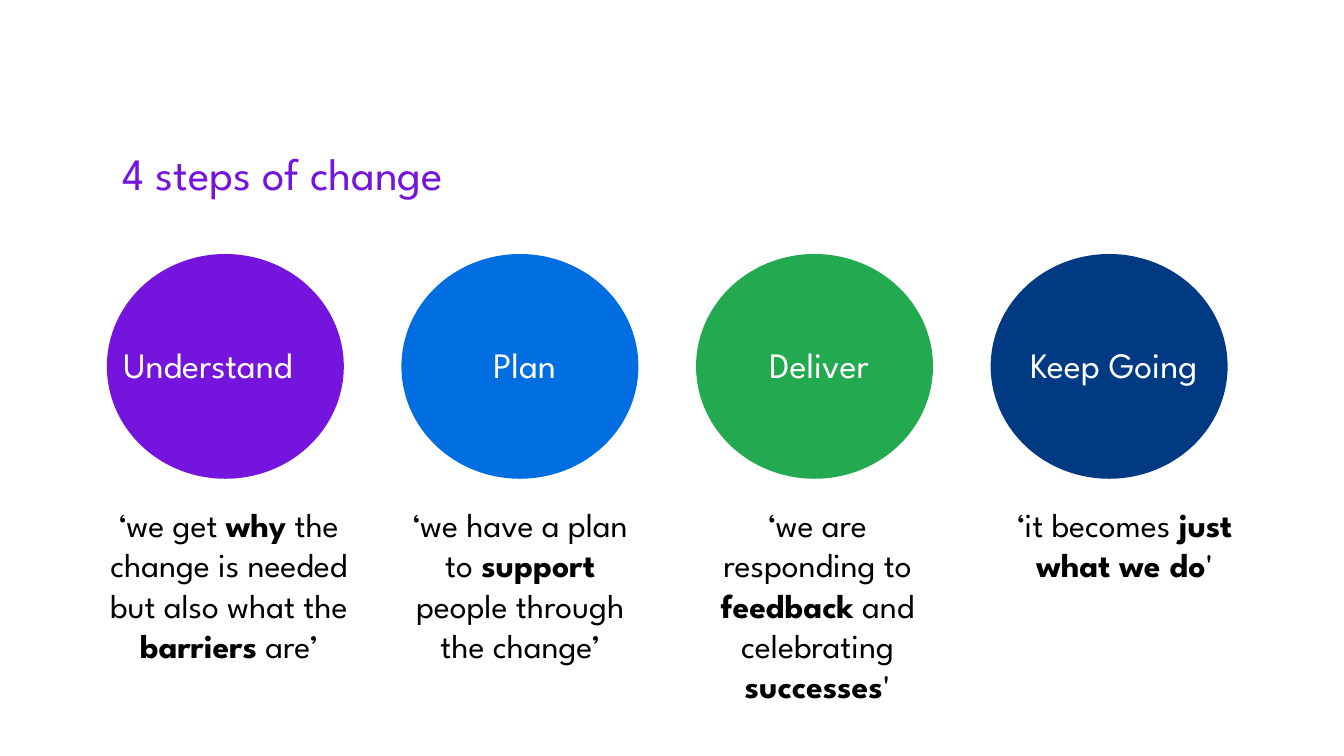
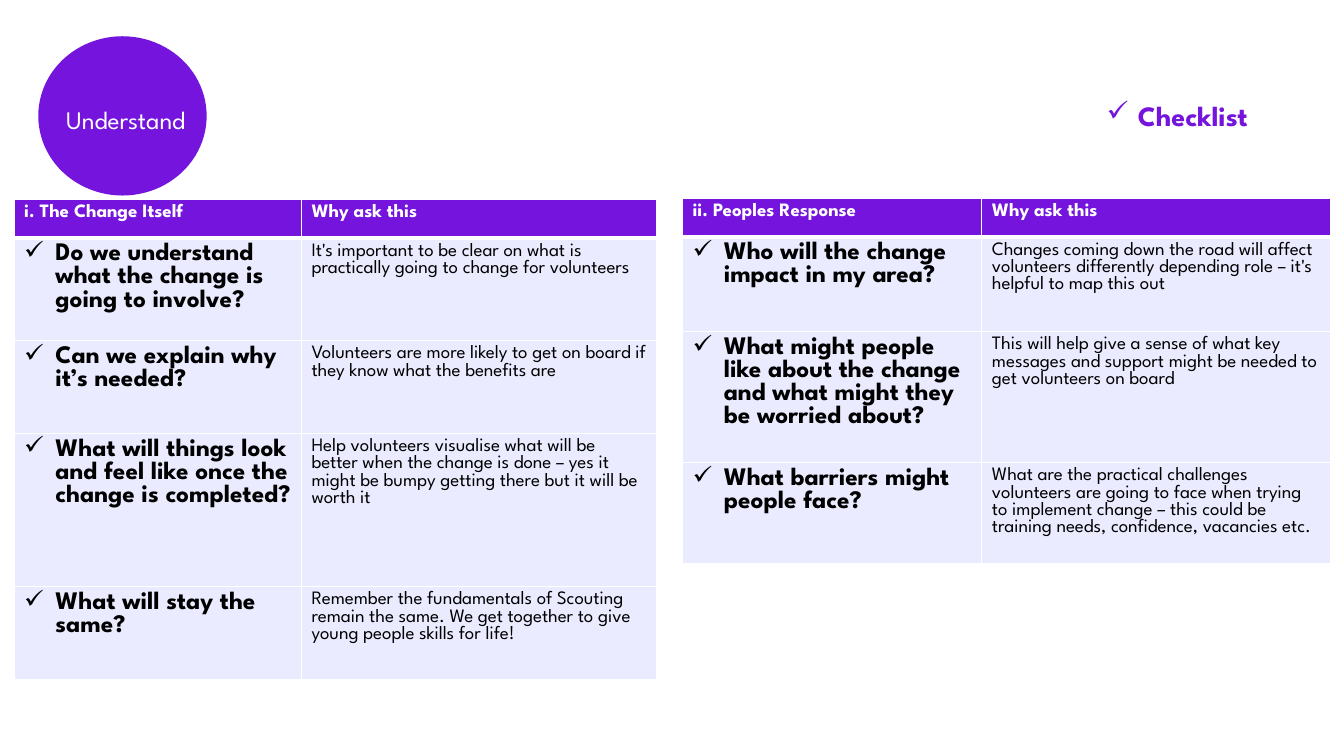
import dataclasses

import lxml.etree
import pptx
import pptx.dml.color
import pptx.enum.shapes
import pptx.enum.text
import pptx.oxml.ns
import pptx.util

COLORS = {
    "purple": "7414DC",
    "blue": "006EE0",
    "green": "23A950",
    "navy": "003A82",
    "lavender": "EBEBFF",
    "white": "FFFFFF",
    "black": "000000",
}
FONT = "League Spartan"
SLIDE_WIDTH = pptx.util.Inches(13.33)
SLIDE_HEIGHT = pptx.util.Inches(7.5)
COLUMN = SLIDE_WIDTH / 100
ROW = SLIDE_HEIGHT / 100
BULLET_INDENT = pptx.util.Inches(0.31)
ALIGN = pptx.enum.text.PP_ALIGN

STEP_PITCH = 21.92
STEPS = [
    ("Understand", "purple", ALIGN.LEFT, -0.9,
     ["‘we get ", "why", " the change is needed but also what the ", "barriers", " are’"]),
    ("Plan", "blue", ALIGN.CENTER, -1.14,
     ["‘we have a plan to ", "support", " people through the change’"]),
    ("Deliver", "green", ALIGN.CENTER, -0.94,
     ["‘we are responding to ", "feedback", " and celebrating ", "successes", "'"]),
    ("Keep Going", "navy", ALIGN.CENTER, 0,
     ["‘it becomes ", "just what we do", "'"]),
]

CHANGE_QUESTIONS = [
    ("i. The Change Itself", "Why ask this"),
    ("Do we understand what the change is going to involve?",
     "It's important to be clear on what is practically going to change for volunteers"),
    ("Can we explain why it’s needed?",
     "Volunteers are more likely to get on board if they know what the benefits are"),
    ("What will things look and feel like once the change is completed?",
     "Help volunteers visualise what will be better when the change is done – "
     "yes it might be bumpy getting there but it will be worth it"),
    ("What will stay the same?",
     "Remember the fundamentals of Scouting remain the same. "
     "We get together to give young people skills for life!"),
]
RESPONSE_QUESTIONS = [
    ("ii. Peoples Response", "Why ask this"),
    ("Who will the change impact in my area?",
     "Changes coming down the road will affect volunteers differently "
     "depending role – it's helpful to map this out"),
    ("What might people like about the change and what might they be worried about?",
     "This will help give a sense of what key messages and support "
     "might be needed to get volunteers on board"),
    ("What barriers might people face?",
     "What are the practical challenges volunteers are going to face when trying to "
     "implement change – this could be training needs, confidence, vacancies etc."),
]


@dataclasses.dataclass
class Box:
    """A region measured in grid columns and rows."""
    left: float
    top: float
    width: float
    height: float

    def emu(self):
        """Return left, top, width and height in EMU."""
        return (round(self.left * COLUMN), round(self.top * ROW),
                round(self.width * COLUMN), round(self.height * ROW))


def rgb(name):
    """Return the named colour."""
    return pptx.dml.color.RGBColor.from_string(COLORS[name])


def add_run(paragraph, text, size, color, bold=False):
    """Add one styled run."""
    run = paragraph.add_run()
    run.text = text
    run.font.name = FONT
    run.font.size = pptx.util.Pt(size)
    run.font.bold = bold
    run.font.color.rgb = rgb(color)


def add_tick(paragraph):
    """Give a paragraph a hanging tick bullet."""
    properties = paragraph._p.get_or_add_pPr()
    properties.set("marL", str(BULLET_INDENT))
    properties.set("indent", str(-BULLET_INDENT))
    bullet = lxml.etree.SubElement(properties, pptx.oxml.ns.qn("a:buChar"))
    bullet.set("char", "✓")


def add_text(slide, box, texts, size, color, line, align=ALIGN.LEFT, inset=0.0,
             tick=False, bold=False):
    """Add a text box whose every second run reverses the weight."""
    shape = slide.shapes.add_textbox(*box.emu())
    frame = shape.text_frame
    frame.word_wrap = True
    frame.margin_left = frame.margin_right = pptx.util.Inches(inset)
    frame.margin_top = frame.margin_bottom = pptx.util.Inches(inset / 2)
    paragraph = frame.paragraphs[0]
    paragraph.alignment = align
    paragraph.line_spacing = pptx.util.Pt(line)
    if tick:
        add_tick(paragraph)
    for index, text in enumerate(texts):
        add_run(paragraph, text, size, color, bold != (index % 2 == 1))


def add_step_circle(slide, box, label, color, size, align=ALIGN.CENTER):
    """Draw a step circle with its label on the middle line."""
    circle = slide.shapes.add_shape(pptx.enum.shapes.MSO_SHAPE.OVAL, *box.emu())
    circle.shadow.inherit = False
    circle.fill.solid()
    circle.fill.fore_color.rgb = rgb(color)
    circle.line.fill.background()
    label_height = 5
    label_box = Box(box.left + box.width * 0.07, box.top + (box.height - label_height) / 2,
                    box.width * 0.9, label_height)
    add_text(slide, label_box, [label], size, "white", 27, align)


def add_borders(cell, widths):
    """Draw white cell borders of the given widths in points."""
    properties = cell._tc.get_or_add_tcPr()
    for side, width in widths.items():
        line = lxml.etree.SubElement(properties, pptx.oxml.ns.qn("a:ln" + side))
        line.set("w", str(pptx.util.Pt(width)))
        fill = lxml.etree.SubElement(line, pptx.oxml.ns.qn("a:solidFill"))
        color = lxml.etree.SubElement(fill, pptx.oxml.ns.qn("a:srgbClr"))
        color.set("val", COLORS["white"])


def add_question_table(slide, left, top, columns, rows, questions):
    """Draw a table of questions and the reasons to ask them."""
    box = Box(left, top, sum(columns), sum(rows))
    table = slide.shapes.add_table(len(rows), len(columns), *box.emu()).table
    table.horz_banding = False
    for column, width in zip(table.columns, columns):
        column.width = round(width * COLUMN)
    for row_index, (height, texts) in enumerate(zip(rows, questions)):
        table.rows[row_index].height = round(height * ROW)
        header = row_index == 0
        for column_index, text in enumerate(texts):
            cell = table.cell(row_index, column_index)
            question = not header and column_index == 0
            add_borders(cell, {"L": 1, "R": 1, "T": 3 if row_index == 1 else 1,
                               "B": 3 if header else 1})
            cell.fill.solid()
            cell.fill.fore_color.rgb = rgb("purple" if header else "lavender")
            paragraph = cell.text_frame.paragraphs[0]
            if question:
                add_tick(paragraph)
            add_run(paragraph, text, 18 if question else 13.5,
                    "white" if header else "black", header or question)


def build_steps_slide(slide):
    """Build the overview of the four steps."""
    add_text(slide, Box(9.15, 21.33, 65.2, 5), ["4 steps of change"], 32, "purple", 27)
    for index, (label, color, align, quote_shift, quote) in enumerate(STEPS):
        left = 7.95 + index * STEP_PITCH
        add_step_circle(slide, Box(left, 33.6, 17.63, 29.73), label, color, 25.5, align)
        add_text(slide, Box(left + quote_shift, 66, 19.95, 28.27), quote, 24, "black",
                 28.8, ALIGN.CENTER, inset=0.1)


def build_checklist_slide(slide):
    """Build the checklist for the first step."""
    label, color = STEPS[0][:2]
    add_step_circle(slide, Box(2.85, 4.8, 12.53, 21.07), label, color, 18)
    add_question_table(slide, 1.05, 26.4, [21.38, 26.4],
                       [5.07, 13.6, 12.27, 20.27, 12.27], CHANGE_QUESTIONS)
    add_question_table(slide, 50.78, 26.27, [22.28, 25.95],
                       [5.07, 12.53, 17.33, 13.33], RESPONSE_QUESTIONS)
    add_text(slide, Box(81.6, 12.4, 13.58, 5.87), ["Checklist"], 20, "purple", 24,
             inset=0.1, tick=True, bold=True)


def main():
    """Build and save the presentation."""
    presentation = pptx.Presentation()
    presentation.slide_width = SLIDE_WIDTH
    presentation.slide_height = SLIDE_HEIGHT
    for build in (build_steps_slide, build_checklist_slide):
        build(presentation.slides.add_slide(presentation.slide_layouts[6]))
    presentation.save("out.pptx")


if __name__ == "__main__":
    main()
